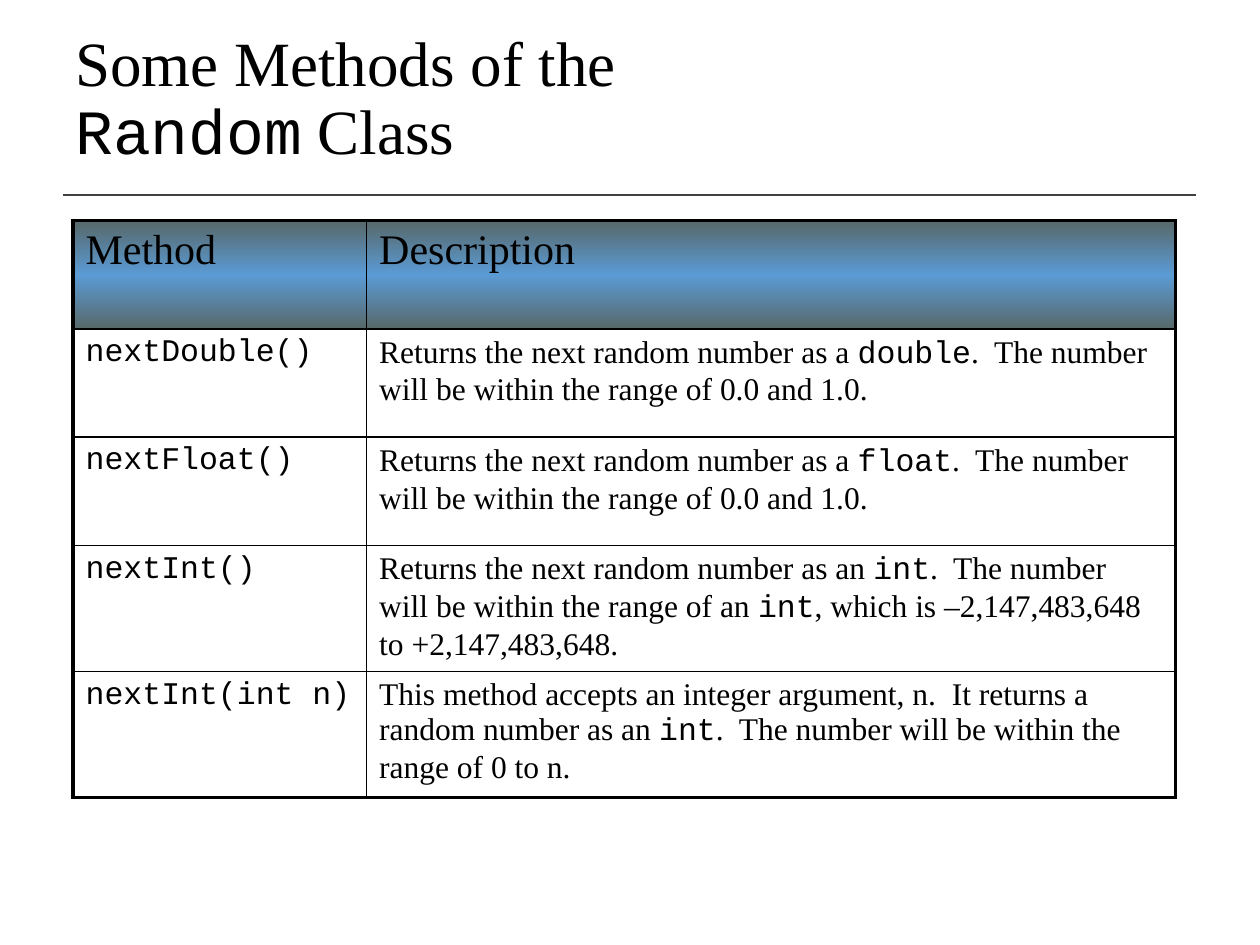
"""Build a slide that tabulates some methods of the Random class."""
import lxml.etree
import pptx
import pptx.dml.color
import pptx.enum.shapes
import pptx.enum.text
import pptx.oxml
import pptx.oxml.ns
import pptx.util

INK = "000000"
THIN, THICK = 1, 2.25
HEADER_STOPS = [(0, "576869"), (50, "5B9BD5"), (100, "576869")]
METHODS = [
    ("Method", "Description"),
    ("`nextDouble()`", "Returns the next random number as a `double`.  "
     "The number will be within the range of 0.0 and 1.0."),
    ("`nextFloat()`", "Returns the next random number as a `float`.  "
     "The number will be within the range of 0.0 and 1.0."),
    ("`nextInt()`", "Returns the next random number as an `int`.  "
     "The number will be within the range of an `int`, "
     "which is –2,147,483,648 to +2,147,483,648."),
    ("`nextInt(int n)`", "This method accepts an integer argument, n.  "
     "It returns a random number as an `int`.  "
     "The number will be within the range of 0 to n."),
]


def rgb(code):
    return pptx.dml.color.RGBColor.from_string(code)


def write(frame, text, size=18, color=INK, spacing=None):
    """Write text on one paragraph, with backticks around code."""
    paragraph = frame.paragraphs[0]
    paragraph.line_spacing = spacing
    for row, line in enumerate(text.split("\n")):
        if row:
            paragraph.add_line_break()
        for part, words in enumerate(line.split("`")):
            if words:
                run = paragraph.add_run()
                run.text = words
                run.font.name = "Courier New" if part % 2 else "Times New Roman"
                run.font.size = pptx.util.Pt(size)
                run.font.color.rgb = rgb(color)


deck = pptx.Presentation()
deck.slide_width, deck.slide_height = pptx.util.Inches(10), pptx.util.Inches(7.5)
slide = deck.slides.add_slide(deck.slide_layouts[6])
inch = pptx.util.Inches

rule = slide.shapes.add_connector(
    pptx.enum.shapes.MSO_CONNECTOR.STRAIGHT,
    inch(0.5), inch(1.55), inch(9.49), inch(1.55))
rule.line.color.rgb = rgb("404040")
rule.line.width = pptx.util.Pt(1)
lxml.etree.SubElement(rule._element.spPr, pptx.oxml.ns.qn("a:effectLst"))

heading = slide.shapes.add_textbox(
    inch(0.5), inch(0.17), inch(9.17), inch(1.25)).text_frame
heading.word_wrap = True
heading.vertical_anchor = pptx.enum.text.MSO_ANCHOR.MIDDLE
write(heading, "Some Methods of the \n`Random` Class", size=36, spacing=0.9)

row_height = 0.86
methods = slide.shapes.add_table(
    len(METHODS), 2, inch(0.58), inch(1.75),
    inch(8.75), inch(row_height * len(METHODS))).table
methods.first_row = methods.horz_banding = False
for column, width in zip(methods.columns, (2.33, 6.42)):
    column.width = inch(width)

namespace = pptx.oxml.ns.nsdecls("a")
stops = "".join(
    f'<a:gs pos="{share * 1000}"><a:srgbClr val="{code}"/></a:gs>'
    for share, code in HEADER_STOPS)
header_fill = (f'<a:gradFill {namespace} rotWithShape="1"><a:gsLst>{stops}</a:gsLst>'
               '<a:lin ang="5400000" scaled="1"/></a:gradFill>')

last = len(METHODS) - 1
for row, entry in enumerate(METHODS):
    for column, text in enumerate(entry):
        cell = methods.cell(row, column)
        write(cell.text_frame, text, size=18 if row else 24)
        properties = cell._tc.get_or_add_tcPr()
        outer_sides = {"L": column == 0, "R": column == 1,
                       "T": row == 0, "B": row == last}
        for side, outer in outer_sides.items():
            weight = pptx.util.Pt(THICK if outer else THIN)
            properties.append(pptx.oxml.parse_xml(
                f'<a:ln{side} {namespace} w="{weight}"><a:solidFill>'
                f'<a:srgbClr val="{INK}"/></a:solidFill></a:ln{side}>'))
        if row:
            cell.fill.background()
        else:
            properties.append(pptx.oxml.parse_xml(header_fill))
for line in methods.rows:
    line.height = inch(row_height)

deck.save("out.pptx")
